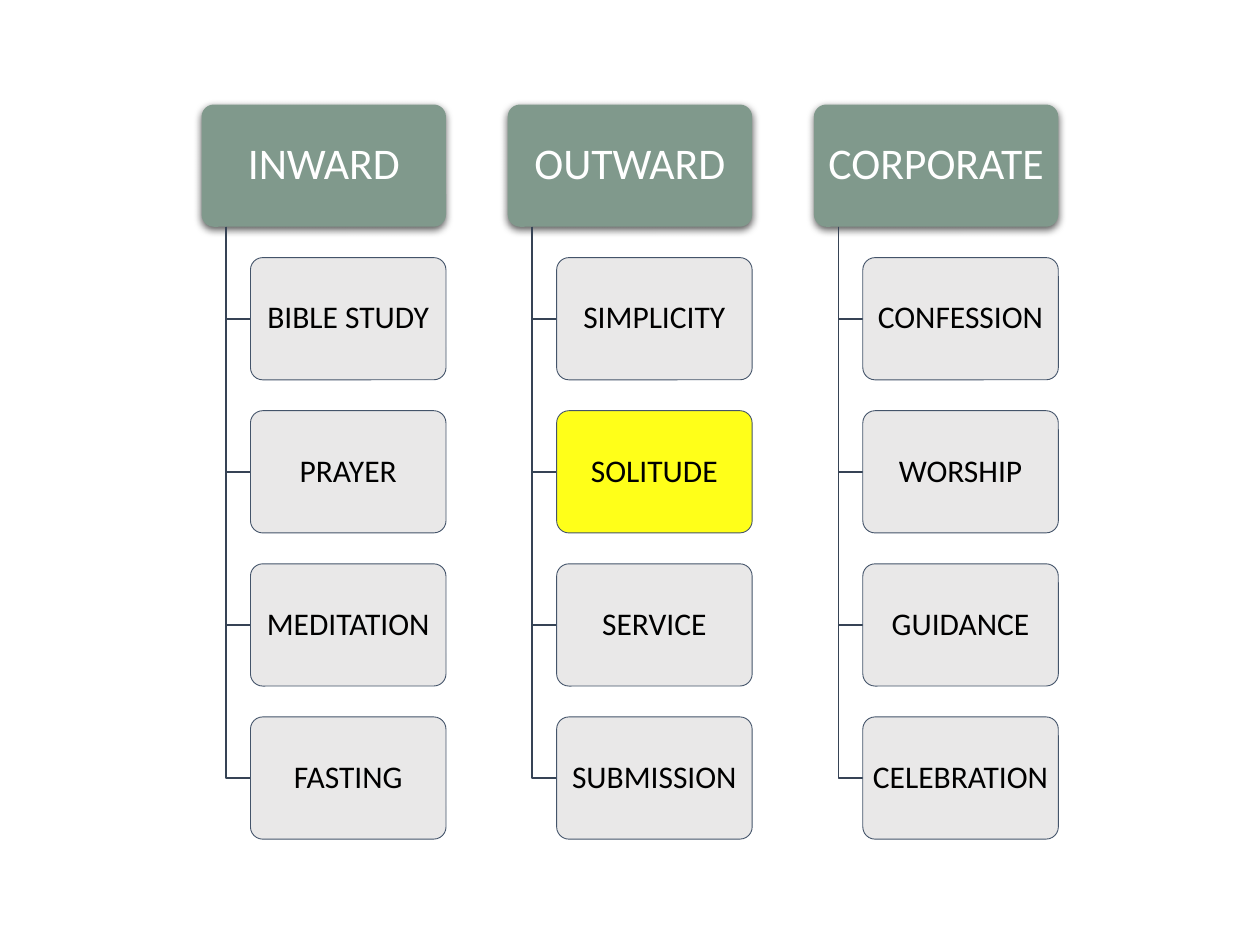
from lxml import etree
from pptx import Presentation
from pptx.dml.color import RGBColor
from pptx.enum.shapes import MSO_SHAPE
from pptx.enum.text import MSO_ANCHOR, PP_ALIGN
from pptx.oxml.ns import qn
from pptx.util import Inches, Pt

ROUNDED = MSO_SHAPE.ROUNDED_RECTANGLE
MIDDLE = MSO_ANCHOR.MIDDLE
CENTER = PP_ALIGN.CENTER

# Content
DISCIPLINES = {
    "INWARD": ["BIBLE STUDY", "PRAYER", "MEDITATION", "FASTING"],
    "OUTWARD": ["SIMPLICITY", "SOLITUDE", "SERVICE", "SUBMISSION"],
    "CORPORATE": ["CONFESSION", "WORSHIP", "GUIDANCE", "CELEBRATION"],
}
HIGHLIGHTED = "SOLITUDE"

# Colours
GREEN = RGBColor(0x80, 0x99, 0x8C)
GREY = RGBColor(0xE7, 0xE6, 0xE6)
YELLOW = RGBColor(0xFF, 0xFF, 0x00)
BORDER = RGBColor(0x44, 0x54, 0x6A)
BRANCH = RGBColor(0x36, 0x43, 0x55)
WHITE = RGBColor(0xFF, 0xFF, 0xFF)
BLACK = RGBColor(0x00, 0x00, 0x00)

# Grid, in inches
LEFT, TOP = 1.6, 0.83
HEADER_WIDTH, BOX_HEIGHT = 1.94, 0.97
COLUMN_PITCH = 2.43
ROW_PITCH = COLUMN_PITCH / 2
INDENT = HEADER_WIDTH / 5

HEADER = {"size": Pt(25), "color": WHITE, "inset": Inches(0.05)}
ITEM = {"size": Pt(18), "color": BLACK, "inset": Inches(0.04)}


def add_box(slide, text, left, top, width, fill, style):
    shape = slide.shapes.add_shape(
        ROUNDED, Inches(left), Inches(top), Inches(width), Inches(BOX_HEIGHT))
    shape.adjustments[0] = 0.1
    shape.shadow.inherit = False
    shape.fill.solid()
    shape.fill.fore_color.rgb = fill
    frame = shape.text_frame
    settings = {
        "word_wrap": True, "vertical_anchor": MIDDLE,
        "margin_left": style["inset"], "margin_right": style["inset"],
        "margin_top": Inches(0.03), "margin_bottom": Inches(0.03),
    }
    for name, value in settings.items():
        setattr(frame, name, value)
    paragraph = frame.paragraphs[0]
    paragraph.alignment = CENTER
    paragraph.line_spacing = 0.9
    run = paragraph.add_run()
    run.text = text
    run.font.name = "Calibri"
    run.font.size = style["size"]
    run.font.color.rgb = style["color"]
    return shape


def add_header(slide, text, left):
    shape = add_box(slide, text, left, TOP, HEADER_WIDTH, GREEN, HEADER)
    shape.line.fill.background()
    # Soft shadow straight below
    effects = shape._element.spPr.find(qn("a:effectLst"))
    shadow = etree.SubElement(
        effects, qn("a:outerShdw"), blurRad=str(Pt(4.5)), dist=str(Pt(1.5)),
        dir="5400000", algn="ctr", rotWithShape="0")
    color = etree.SubElement(shadow, qn("a:srgbClr"), val="000000")
    etree.SubElement(color, qn("a:alpha"), val="63000")


def add_item(slide, text, left, top):
    fill = YELLOW if text == HIGHLIGHTED else GREY
    shape = add_box(slide, text, left, top, HEADER_WIDTH - INDENT, fill, ITEM)
    shape.line.color.rgb = BORDER
    shape.line.width = Pt(0.5)
    color = shape._element.spPr.find(qn("a:solidFill")).find(qn("a:srgbClr"))
    etree.SubElement(color, qn("a:alpha"), val="90000")


def add_branch(slide, left, top, right, bottom):
    x, y, end_x, end_y = (Inches(value) for value in (left, top, right, bottom))
    builder = slide.shapes.build_freeform(x, y)
    builder.add_line_segments([(x, end_y), (end_x, end_y)], close=False)
    shape = builder.convert_to_shape()
    shape.shadow.inherit = False
    shape.fill.background()
    shape.line.color.rgb = BRANCH
    shape.line.width = Pt(1)


def main():
    presentation = Presentation()
    presentation.slide_width = Inches(10)
    presentation.slide_height = Inches(7.5)
    slide = presentation.slides.add_slide(presentation.slide_layouts[6])

    # One column per group: header, then branches and items
    for column, (group, items) in enumerate(DISCIPLINES.items()):
        left = LEFT + column * COLUMN_PITCH
        add_header(slide, group, left)
        for row, item in enumerate(items, start=1):
            top = TOP + row * ROW_PITCH
            add_branch(slide, left + INDENT / 2, TOP + BOX_HEIGHT,
                       left + INDENT, top + BOX_HEIGHT / 2)
            add_item(slide, item, left + INDENT, top)

    presentation.save("out.pptx")


if __name__ == "__main__":
    main()
